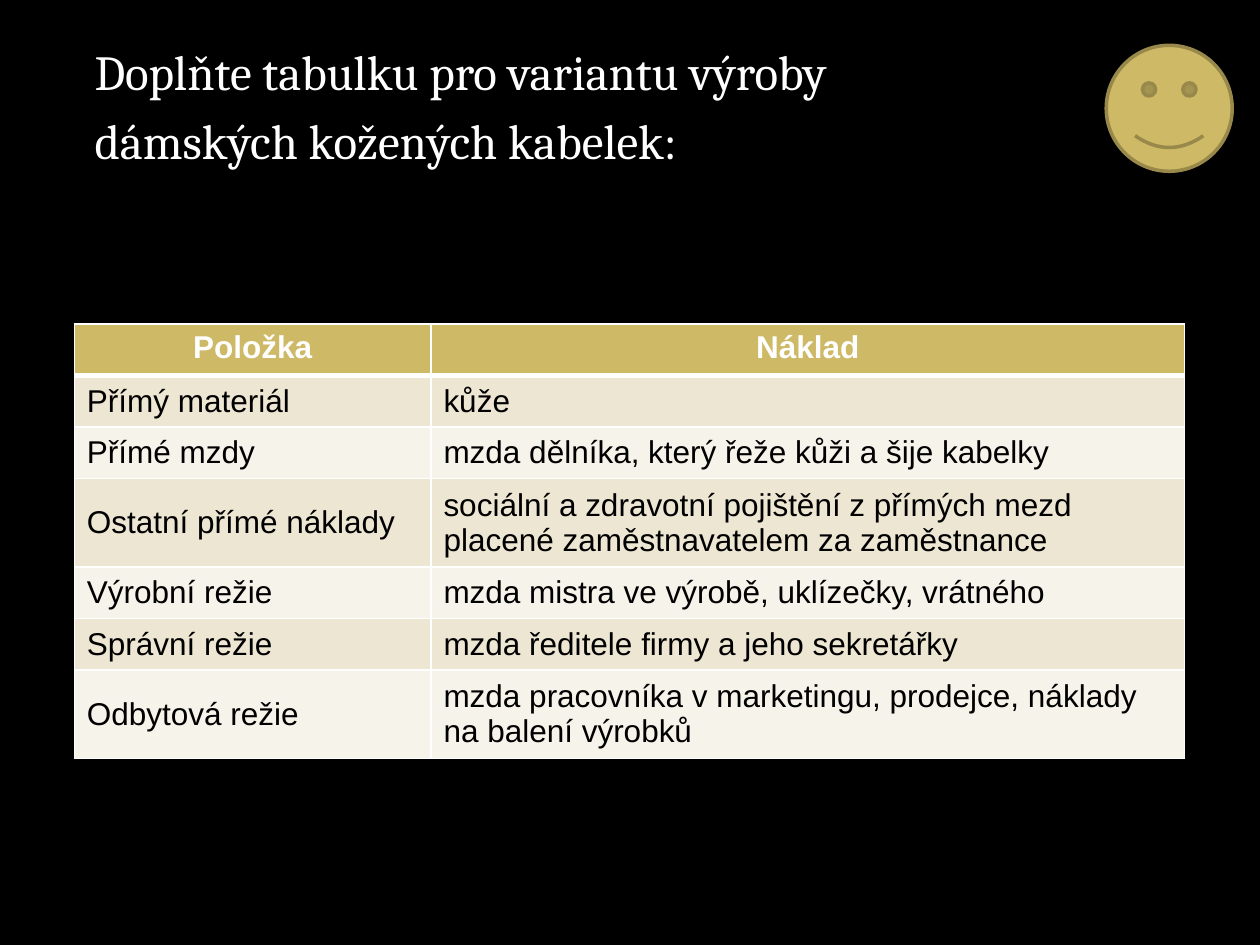
import pptx
import pptx.util
import pptx.dml.color
import pptx.enum.shapes
import pptx.enum.text
import pptx.oxml.ns
from lxml import etree

Inches, Pt = pptx.util.Inches, pptx.util.Pt
RGBColor = pptx.dml.color.RGBColor
PP_ALIGN = pptx.enum.text.PP_ALIGN
MSO_ANCHOR = pptx.enum.text.MSO_ANCHOR
qn = pptx.oxml.ns.qn

BLACK = RGBColor(0x00, 0x00, 0x00)
WHITE = RGBColor(0xFF, 0xFF, 0xFF)
GOLD = RGBColor(0xCE, 0xB9, 0x66)
DARK_GOLD = RGBColor(0x98, 0x89, 0x4B)
BANDS = [RGBColor(0xED, 0xE6, 0xD3), RGBColor(0xF6, 0xF3, 0xEA)]

HEADING = ["Doplňte tabulku pro variantu výroby", "dámských kožených kabelek:"]
COSTS = [
    ("Položka", "Náklad"),
    ("Přímý materiál", "kůže"),
    ("Přímé mzdy", "mzda dělníka, který řeže kůži a šije kabelky"),
    ("Ostatní přímé náklady",
     "sociální a zdravotní pojištění z přímých mezd placené zaměstnavatelem za zaměstnance"),
    ("Výrobní režie", "mzda mistra ve výrobě, uklízečky, vrátného"),
    ("Správní režie", "mzda ředitele firmy a jeho sekretářky"),
    ("Odbytová režie", "mzda pracovníka v marketingu, prodejce, náklady na balení výrobků"),
]
COLUMN_WIDTHS = [2.83, 5.98]
ONE_LINE, TWO_LINES = 0.41, 0.7
LINE_CAPACITY = 50


def style_font(font, name, size, color, bold=False):
    font.name, font.size, font.bold = name, Pt(size), bold
    font.color.rgb = color


def add_border(cell, side, width):
    border = etree.SubElement(cell._tc.get_or_add_tcPr(), qn(f"a:ln{side}"), w=str(Pt(width)))
    fill = etree.SubElement(border, qn("a:solidFill"))
    etree.SubElement(fill, qn("a:srgbClr"), val=str(WHITE))


def fill_heading(heading):
    heading.left, heading.top = Inches(0.5), Inches(0.28)
    heading.width, heading.height = Inches(9), Inches(6.41)
    frame = heading.text_frame
    frame.text = "\n".join(HEADING)
    frame.word_wrap = True
    frame.auto_size = pptx.enum.text.MSO_AUTO_SIZE.NONE
    frame.vertical_anchor = MSO_ANCHOR.TOP
    for line in frame.paragraphs:
        line.alignment = PP_ALIGN.LEFT
        line.space_before = Pt(5.6)
        indents = line._p.get_or_add_pPr()
        indents.set("marL", str(Inches(0.6)))
        indents.set("indent", str(Inches(-0.45)))
        style_font(line.runs[0].font, "Cambria", 28, WHITE)


def add_costs(slide):
    heights = [TWO_LINES if len(cost) > LINE_CAPACITY else ONE_LINE for _, cost in COSTS]
    costs = slide.shapes.add_table(
        len(COSTS), len(COLUMN_WIDTHS), Inches(0.59), Inches(2.57),
        Inches(sum(COLUMN_WIDTHS)), Inches(sum(heights))).table
    for column, width in zip(costs.columns, COLUMN_WIDTHS):
        column.width = Inches(width)
    for r, (entries, height) in enumerate(zip(COSTS, heights)):
        costs.rows[r].height = Inches(height)
        header = r == 0
        for c, entry in enumerate(entries):
            cell = costs.cell(r, c)
            cell.text_frame.text = entry
            cell.vertical_anchor = MSO_ANCHOR.TOP if header else MSO_ANCHOR.MIDDLE
            line = cell.text_frame.paragraphs[0]
            line.alignment = PP_ALIGN.CENTER if header else PP_ALIGN.LEFT
            style_font(line.runs[0].font, "Arial", 18, WHITE if header else BLACK, header)
            for side, width in zip("LRTB", (1, 1, 3 if r == 1 else 1, 3 if header else 1)):
                add_border(cell, side, width)
            cell.fill.solid()
            cell.fill.fore_color.rgb = GOLD if header else BANDS[(r - 1) % 2]


def add_smiley(slide):
    smiley = slide.shapes.add_shape(
        pptx.enum.shapes.MSO_SHAPE.SMILEY_FACE, Inches(8.78), Inches(0.36), Inches(1), Inches(1))
    smiley.shadow.inherit = False
    smiley.fill.solid()
    smiley.fill.fore_color.rgb = GOLD
    smiley.line.color.rgb = DARK_GOLD
    smiley.line.width = Pt(2)


def main():
    deck = pptx.Presentation()
    deck.slide_width, deck.slide_height = Inches(10), Inches(7.5)
    slide = deck.slides.add_slide(deck.slide_layouts[5])
    slide.background.fill.solid()
    slide.background.fill.fore_color.rgb = BLACK
    fill_heading(slide.shapes.title)
    add_costs(slide)
    add_smiley(slide)
    deck.save("out.pptx")


if __name__ == "__main__":
    main()
